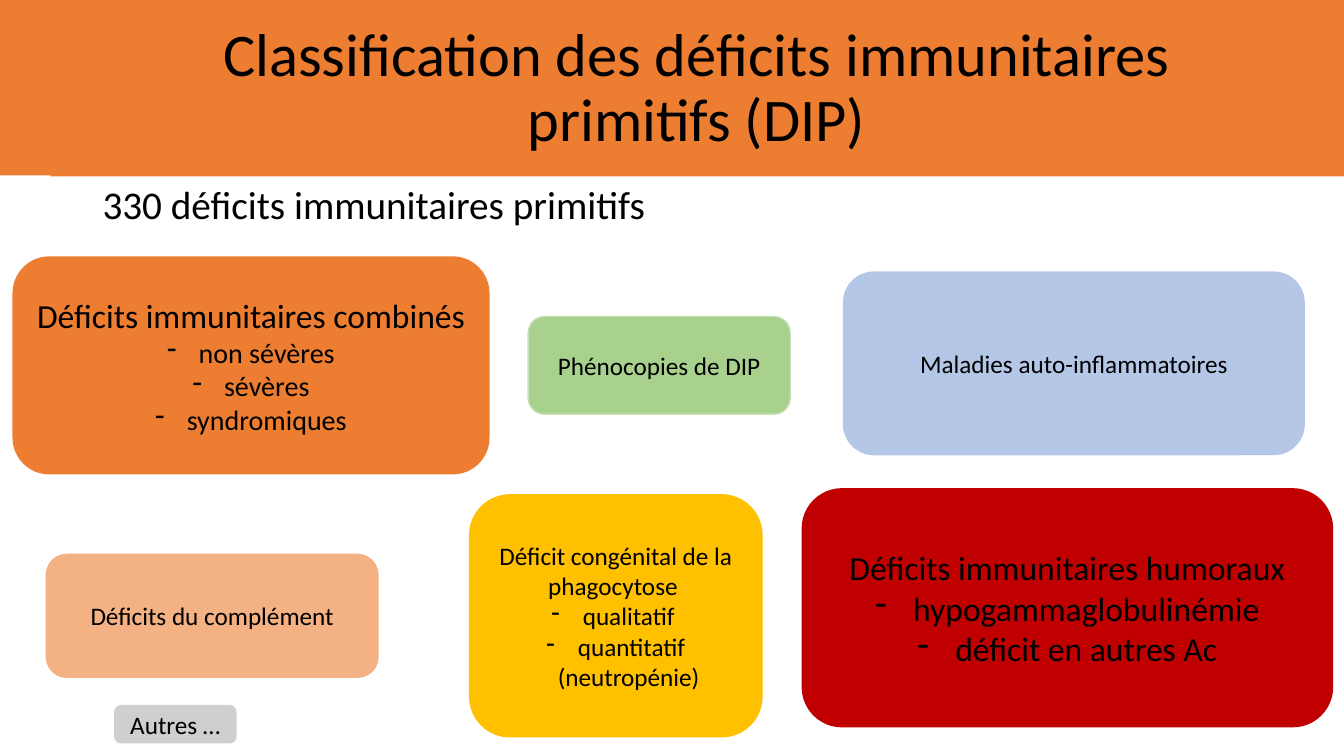
from pptx import Presentation
from pptx.dml.color import RGBColor
from pptx.enum.shapes import MSO_SHAPE
from pptx.enum.text import MSO_ANCHOR, PP_ALIGN
from pptx.oxml.ns import qn
from pptx.util import Pt
from lxml import etree

RECT = MSO_SHAPE.RECTANGLE
ROUND = MSO_SHAPE.ROUNDED_RECTANGLE
MIDDLE = MSO_ANCHOR.MIDDLE
LEFT, CENTER = PP_ALIGN.LEFT, PP_ALIGN.CENTER

BLACK = RGBColor(0x00, 0x00, 0x00)
ORANGE = RGBColor(0xED, 0x7D, 0x31)
RED = RGBColor(0xC0, 0x00, 0x00)
GOLD = RGBColor(0xFF, 0xC0, 0x00)
BLUE = RGBColor(0xB4, 0xC7, 0xE7)
PEACH = RGBColor(0xF4, 0xB1, 0x83)
GREEN = RGBColor(0xA9, 0xD1, 0x8E)
MINT = RGBColor(0xC5, 0xE0, 0xB4)
GRAY = RGBColor(0xD0, 0xCE, 0xCE)

BOXES = [
    ((9.4, 183.6, 339.8, 154.8), ORANGE, ORANGE, 24, "Déficits immunitaires combinés ",
     20, 22.5, ["non sévères", "sévères", "syndromiques"]),
    ((573.1, 349.2, 378.7, 169.9), RED, RED, 24, "Déficits immunitaires humoraux",
     24, 27, ["hypogammaglobulinémie", "déficit en autres Ac"]),
    ((335.5, 353.5, 208.8, 172.8), GOLD, GOLD, 18, "Déficit congénital de la phagocytose ",
     18, 22.5, ["qualitatif ", "quantitatif (neutropénie) "]),
    ((602.6, 194.4, 329, 130.3), BLUE, BLUE, 18, "Maladies auto-inflammatoires", 0, 0, []),
    ((33.1, 396, 236.9, 87.8), PEACH, PEACH, 18, "Déficits du complément", 0, 0, []),
    ((377.3, 226.1, 187.2, 69.8), GREEN, MINT, 18, "Phénocopies de DIP", 0, 0, []),
    ((82.1, 504, 86.4, 26.6), GRAY, GRAY, 18, "Autres …", 0, 0, []),
]


def add_shape(slide, kind, place, fill):
    """Add a flat filled shape without an outline."""
    shape = slide.shapes.add_shape(kind, *map(Pt, place))
    shape.shadow.inherit = False
    shape.fill.solid()
    shape.fill.fore_color.rgb = fill
    shape.line.fill.background()
    return shape


def write(para, text, size, align=CENTER):
    """Write one paragraph in black Calibri."""
    para.text = text
    para.alignment = align
    para.font.name = "Calibri"
    para.font.size = Pt(size)
    para.font.color.rgb = BLACK


def add_dash(para, indent):
    """Give a paragraph a hanging dash bullet."""
    props = para._p.get_or_add_pPr()
    props.set("marL", str(Pt(indent)))
    props.set("indent", str(-Pt(indent)))
    dash = etree.Element(qn("a:buChar"), char="-")
    props.insert(0, dash)


def add_label(slide, place, text, size, align, space=0):
    """Add a text box with one tightly spaced paragraph."""
    frame = slide.shapes.add_textbox(*map(Pt, place)).text_frame
    frame.word_wrap = True
    para = frame.paragraphs[0]
    write(para, text, size, align)
    para.line_spacing = 0.9
    para.space_before = Pt(space)
    return frame


def add_box(slide, place, fill, edge, size, head, small, indent, items):
    """Add a rounded box with a heading and dashed items."""
    box = add_shape(slide, ROUND, place, fill)
    box.line.color.rgb = edge
    box.line.width = Pt(1)
    frame = box.text_frame
    frame.word_wrap = True
    frame.vertical_anchor = MIDDLE
    write(frame.paragraphs[0], head, size)
    for item in items:
        para = frame.add_paragraph()
        write(para, item, small)
        add_dash(para, indent)


def main():
    """Build the slide and save it."""
    deck = Presentation()
    deck.slide_width, deck.slide_height = Pt(960), Pt(540)
    slide = deck.slides.add_slide(deck.slide_layouts[6])
    add_shape(slide, RECT, (0, 0, 960, 125.3), ORANGE)
    add_shape(slide, RECT, (36, 0, 924, 126), ORANGE)
    title = add_label(slide, (108, 23, 779, 81.4),
                      "Classification des déficits immunitaires primitifs (DIP)", 43.2, CENTER)
    title.vertical_anchor = MIDDLE
    add_label(slide, (66.2, 128.9, 828, 357.1), "330 déficits immunitaires primitifs", 28, LEFT, 10)
    for box in BOXES:
        add_box(slide, *box)
    deck.save("out.pptx")


if __name__ == "__main__":
    main()
